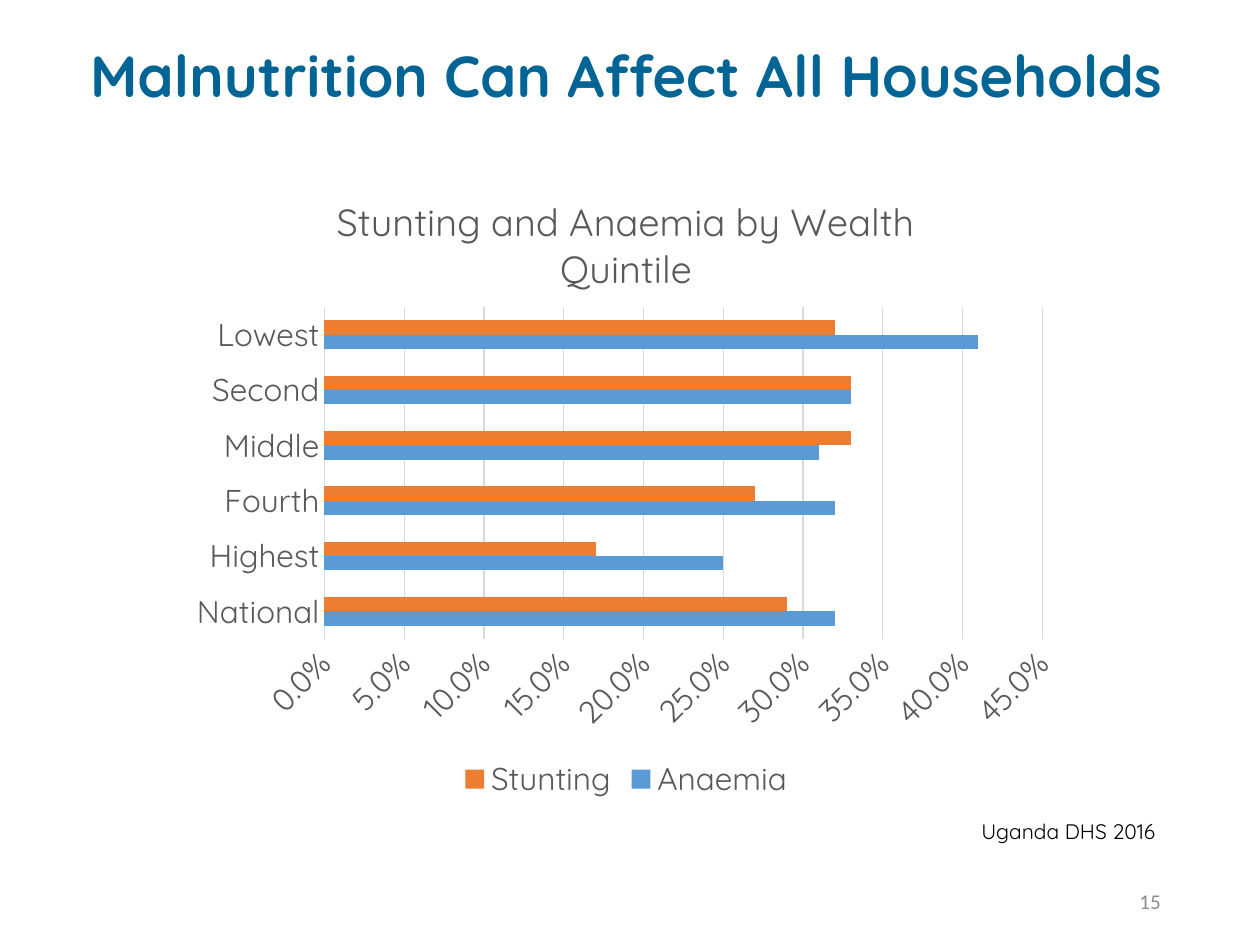
from dataclasses import dataclass

from lxml.etree import SubElement
from pptx import Presentation
from pptx.chart.chart import Chart
from pptx.chart.data import CategoryChartData
from pptx.dml.color import RGBColor
from pptx.enum.chart import XL_CHART_TYPE, XL_LEGEND_POSITION, XL_TICK_MARK
from pptx.enum.text import MSO_ANCHOR, PP_ALIGN
from pptx.oxml.ns import qn
from pptx.slide import Slide
from pptx.text.text import Font
from pptx.util import Pt

COLORS = {
    "title": "006595",
    "body": "000000",
    "muted": "8C8C8C",
    "label": "595959",
    "grid": "D9D9D9",
    "anaemia": "5B9BD5",
    "stunting": "ED7D31",
}
QUINTILES = ["National", "Highest", "Fourth", "Middle", "Second", "Lowest"]


@dataclass(frozen=True)
class Box:
    left: float
    top: float
    width: float
    height: float


@dataclass(frozen=True)
class Label:
    text: str
    box: Box
    size: float
    color: str
    font: str = "Quicksand"
    bold: bool = False
    alignment: PP_ALIGN = PP_ALIGN.LEFT
    line_spacing: float = 1.0


@dataclass(frozen=True)
class Measure:
    name: str
    color: str
    values: tuple[float, ...]


CHART_BOX = Box(102.2, 95.8, 511.2, 364.3)
PLOT_BOX = Box(83.2, 79.7, 410.3, 189.7)
LABELS = [
    Label("15", Box(508.3, 500.4, 162, 28.8), 12, "muted", "Calibri", alignment=PP_ALIGN.RIGHT),
    Label("Malnutrition Can Affect All Households", Box(21.6, 20.9, 672.5, 51.1), 33.1, "title",
          bold=True, alignment=PP_ALIGN.CENTER, line_spacing=0.8),
    Label("Uganda DHS 2016", Box(553.7, 460.4, 131.8, 29.5), 12, "body"),
]
MEASURES = [
    Measure("Anaemia", "anaemia", (0.32, 0.25, 0.32, 0.31, 0.33, 0.41)),
    Measure("Stunting", "stunting", (0.29, 0.17, 0.27, 0.33, 0.33, 0.32)),
]


def apply_format(target: object, values: dict) -> None:
    """Set each named attribute on the target."""
    for name, value in values.items():
        setattr(target, name, value)


def box_lengths(box: Box) -> list[Pt]:
    """Return left, top, width and height as lengths."""
    return [Pt(value) for value in (box.left, box.top, box.width, box.height)]


def style_font(font: Font, size: float, color: str, name: str = "Quicksand", bold: bool = False) -> None:
    """Set the face, size, weight and colour of a font."""
    apply_format(font, {"name": name, "size": Pt(size), "bold": bold})
    font.color.rgb = RGBColor.from_string(COLORS[color])


def add_label(slide: Slide, label: Label) -> None:
    """Add one line of text in a box."""
    frame = slide.shapes.add_textbox(*box_lengths(label.box)).text_frame
    apply_format(frame, {"word_wrap": True, "vertical_anchor": MSO_ANCHOR.MIDDLE})
    paragraph = frame.paragraphs[0]
    apply_format(paragraph, {"alignment": label.alignment, "line_spacing": label.line_spacing})
    run = paragraph.add_run()
    run.text = label.text
    style_font(run.font, label.size, label.color, label.font, label.bold)


def place_plot(chart: Chart) -> None:
    """Fix the inner plot area inside the chart."""
    plot_area = chart.plots[0]._element.getparent()
    layout = plot_area.find(qn("c:layout"))
    if layout is None:
        layout = SubElement(plot_area, qn("c:layout"))
        plot_area.insert(0, layout)
    manual = SubElement(layout, qn("c:manualLayout"))
    settings = {
        "layoutTarget": "inner",
        "xMode": "edge",
        "yMode": "edge",
        "x": PLOT_BOX.left / CHART_BOX.width,
        "y": PLOT_BOX.top / CHART_BOX.height,
        "w": PLOT_BOX.width / CHART_BOX.width,
        "h": PLOT_BOX.height / CHART_BOX.height,
    }
    for name, value in settings.items():
        SubElement(manual, qn(f"c:{name}")).set("val", str(value))


def style_axes(chart: Chart) -> None:
    """Format both axes, the gridlines and the slanted percentages."""
    for axis in (chart.category_axis, chart.value_axis):
        apply_format(axis, {"major_tick_mark": XL_TICK_MARK.NONE, "minor_tick_mark": XL_TICK_MARK.NONE})
        style_font(axis.tick_labels.font, 18, "label")
    value_axis = chart.value_axis
    apply_format(value_axis, {"minimum_scale": 0, "maximum_scale": 0.45, "major_unit": 0.05,
                              "has_major_gridlines": True})
    apply_format(value_axis.tick_labels, {"number_format": "0.0%", "number_format_is_linked": False})
    value_axis.format.line.fill.background()
    for line in (chart.category_axis.format.line, value_axis.major_gridlines.format.line):
        line.color.rgb = RGBColor.from_string(COLORS["grid"])
        line.width = Pt(0.75)
    value_axis._element.find(qn("c:txPr")).find(qn("a:bodyPr")).set("rot", "-2700000")


def add_wealth_chart(slide: Slide) -> None:
    """Add the clustered bars of stunting and anaemia."""
    data = CategoryChartData(number_format="0.0%")
    data.categories = QUINTILES
    for measure in MEASURES:
        data.add_series(measure.name, measure.values)
    chart = slide.shapes.add_chart(XL_CHART_TYPE.BAR_CLUSTERED, *box_lengths(CHART_BOX), data).chart
    style_font(chart.font, 18, "body", "Calibri")
    apply_format(chart, {"has_title": True, "has_legend": True})
    title = chart.chart_title.text_frame
    title.text = "Stunting and Anaemia by Wealth Quintile"
    style_font(title.paragraphs[0].runs[0].font, 21.6, "label")
    apply_format(chart.legend, {"position": XL_LEGEND_POSITION.BOTTOM, "include_in_layout": False})
    style_font(chart.legend.font, 18, "label")
    plot = chart.plots[0]
    apply_format(plot, {"gap_width": 182, "overlap": 0, "vary_by_categories": False})
    for series, measure in zip(plot.series, MEASURES):
        series.format.fill.solid()
        series.format.fill.fore_color.rgb = RGBColor.from_string(COLORS[measure.color])
    style_axes(chart)
    place_plot(chart)


def main() -> None:
    """Build the slide and save it."""
    presentation = Presentation()
    apply_format(presentation, {"slide_width": Pt(720), "slide_height": Pt(540)})
    slide = presentation.slides.add_slide(presentation.slide_layouts[6])
    for label in LABELS:
        add_label(slide, label)
    add_wealth_chart(slide)
    presentation.save("out.pptx")


if __name__ == "__main__":
    main()
